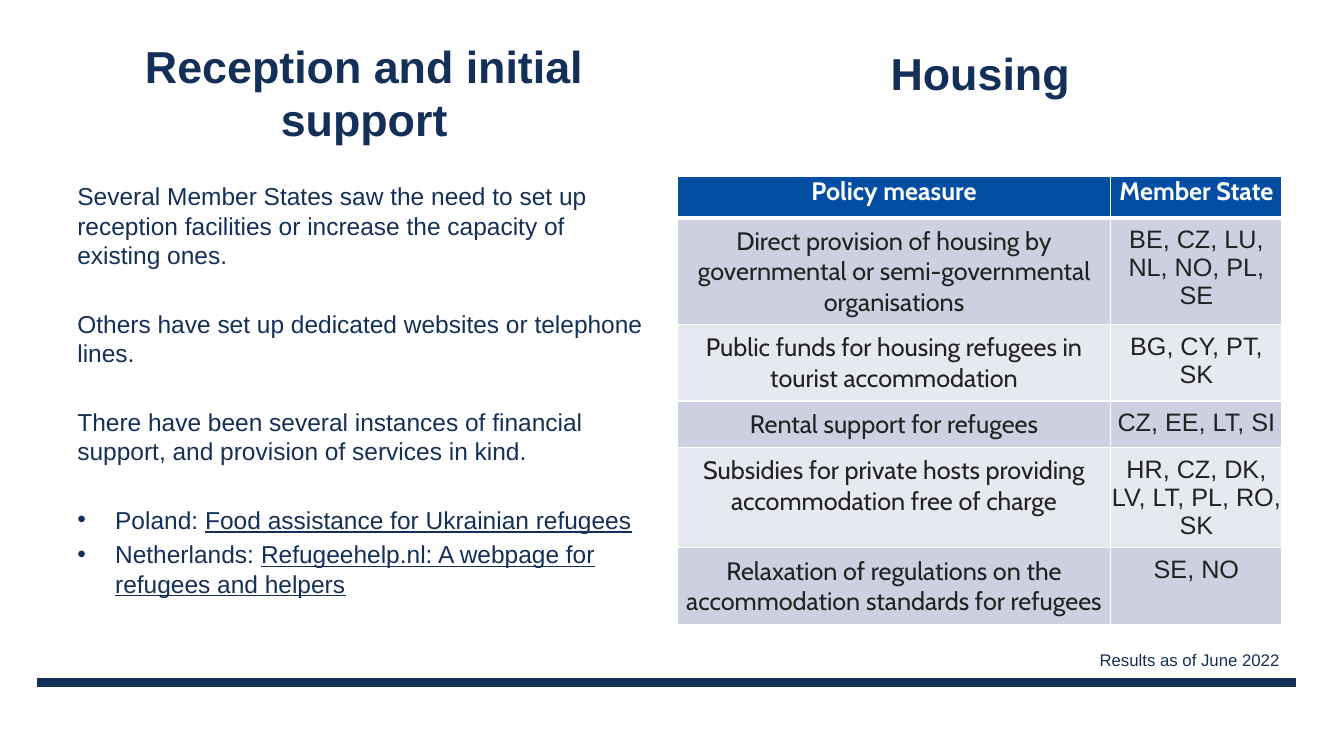
from lxml.etree import SubElement
from pptx import Presentation
from pptx.dml.color import RGBColor
from pptx.enum.shapes import MSO_CONNECTOR as Connector
from pptx.enum.text import MSO_ANCHOR as Anchor, PP_ALIGN as Align
from pptx.oxml.ns import qn
from pptx.util import Pt

COLORS = {
    "navy": "143058",
    "blue": "034EA2",
    "white": "FFFFFF",
    "ink": "222222",
    "band_dark": "CCD0E0",
    "band_light": "E7E9F0",
}

SUPPORT = [
    "Several Member States saw the need to set up reception facilities "
    "or increase the capacity of existing ones.",
    "Others have set up dedicated websites or telephone lines.",
    "There have been several instances of financial support, "
    "and provision of services in kind.",
]
EXAMPLES = [
    ("Poland: ", "Food assistance for Ukrainian refugees"),
    ("Netherlands: ", "Refugeehelp.nl: A webpage for refugees and helpers"),
]
MEASURES = [
    ("Policy measure", "Member State"),
    ("Direct provision of housing by governmental or semi-governmental organisations",
     "BE, CZ, LU, NL, NO, PL, SE"),
    ("Public funds for housing refugees in tourist accommodation", "BG, CY, PT, SK"),
    ("Rental support for refugees", "CZ, EE, LT, SI"),
    ("Subsidies for private hosts providing accommodation free of charge",
     "HR, CZ, DK, LV, LT, PL, RO, SK"),
    ("Relaxation of regulations on the accommodation standards for refugees", "SE, NO"),
]


def rgb(name):
    return RGBColor.from_string(COLORS[name])


def apply(target, **values):
    for name, value in values.items():
        setattr(target, name, value)


def add_span(para, text, size, color="navy", **values):
    span = para.add_run()
    span.text = text
    apply(span.font, **{"name": "Arial", "size": Pt(size), **values})
    span.font.color.rgb = rgb(color)


def add_box(page, left, top, width, height, **values):
    box = page.shapes.add_textbox(Pt(left), Pt(top), Pt(width), Pt(height))
    frame = box.text_frame
    apply(frame, **{"word_wrap": True, **values})
    return frame


def add_title(page, text, left, top, width, height):
    frame = add_box(page, left, top, width, height, vertical_anchor=Anchor.MIDDLE)
    para = frame.paragraphs[0]
    apply(para, alignment=Align.CENTER, line_spacing=Pt(38))
    add_span(para, text, 32, bold=True)


def add_bullet(para):
    props = para._p.get_or_add_pPr()
    props.set("marL", str(Pt(27)))
    props.set("indent", str(-Pt(27)))
    SubElement(props, qn("a:buFont"), typeface="Arial")
    SubElement(props, qn("a:buChar"), char="•")


def add_support(page):
    frame = add_box(page, 48.2, 126, 424, 319.7)
    for index, text in enumerate(SUPPORT):
        para = frame.add_paragraph() if index else frame.paragraphs[0]
        apply(para, line_spacing=Pt(21), space_before=Pt(28 if index else 0))
        add_span(para, text, 17.5)
    for index, (country, service) in enumerate(EXAMPLES):
        para = frame.add_paragraph()
        apply(para, line_spacing=Pt(21), space_before=Pt(3.5 if index else 28))
        add_bullet(para)
        add_span(para, country, 17.5)
        add_span(para, service, 17.5, underline=True)


def add_borders(cell, bottom):
    props = cell._tc.get_or_add_tcPr()
    for side, width in (("L", 1), ("R", 1), ("T", 1), ("B", bottom)):
        line = SubElement(props, qn(f"a:ln{side}"), w=str(Pt(width)))
        fill = SubElement(line, qn("a:solidFill"))
        SubElement(fill, qn("a:srgbClr"), val=COLORS["white"])


def fill_cell(cell, text, row, column):
    header = row == 0
    band = "blue" if header else "band_dark" if row % 2 else "band_light"
    inset = Pt(0 if header else 5.75)
    apply(cell, margin_left=0, margin_right=0, margin_top=inset, margin_bottom=inset)
    add_borders(cell, 3 if header else 1)
    cell.fill.solid()
    cell.fill.fore_color.rgb = rgb(band)
    para = cell.text_frame.paragraphs[0]
    para.alignment = Align.CENTER
    states = column == 1 and not header
    if states:
        para.line_spacing = Pt(20.1)
    add_span(para, text, 18, "white" if header else "ink",
             name="Arial" if states else "Cabin", bold=header)


def add_measures(page):
    count = len(MEASURES)
    table = page.shapes.add_table(count, 2, Pt(483.8), Pt(126), Pt(432), Pt(29.5 * count)).table
    table.horz_banding = False
    for column, width in zip(table.columns, (309.6, 122.4)):
        column.width = Pt(width)
    for row, texts in enumerate(MEASURES):
        table.rows[row].height = Pt(29.5)
        for column, text in enumerate(texts):
            fill_cell(table.cell(row, column), text, row, column)


def add_rule(page):
    rule = page.shapes.add_connector(
        Connector.STRAIGHT, Pt(26.6), Pt(487.4), Pt(925.9), Pt(487.4))
    rule.line.color.rgb = rgb("navy")
    rule.line.width = Pt(6)
    SubElement(rule._element.spPr, qn("a:effectLst"))


def main():
    deck = Presentation()
    apply(deck, slide_width=Pt(960), slide_height=Pt(540))
    page = deck.slides.add_slide(deck.slide_layouts[6])
    add_rule(page)
    add_title(page, "Reception and initial support", 48.2, 21.6, 424, 88.6)
    add_support(page)
    add_measures(page)
    add_title(page, "Housing", 488.2, 21.6, 424, 61.2)
    note = add_box(page, 778.3, 460.8, 145.4, 21.6, word_wrap=False)
    add_span(note.paragraphs[0], "Results as of June 2022", 12)
    deck.save("out.pptx")


if __name__ == "__main__":
    main()
